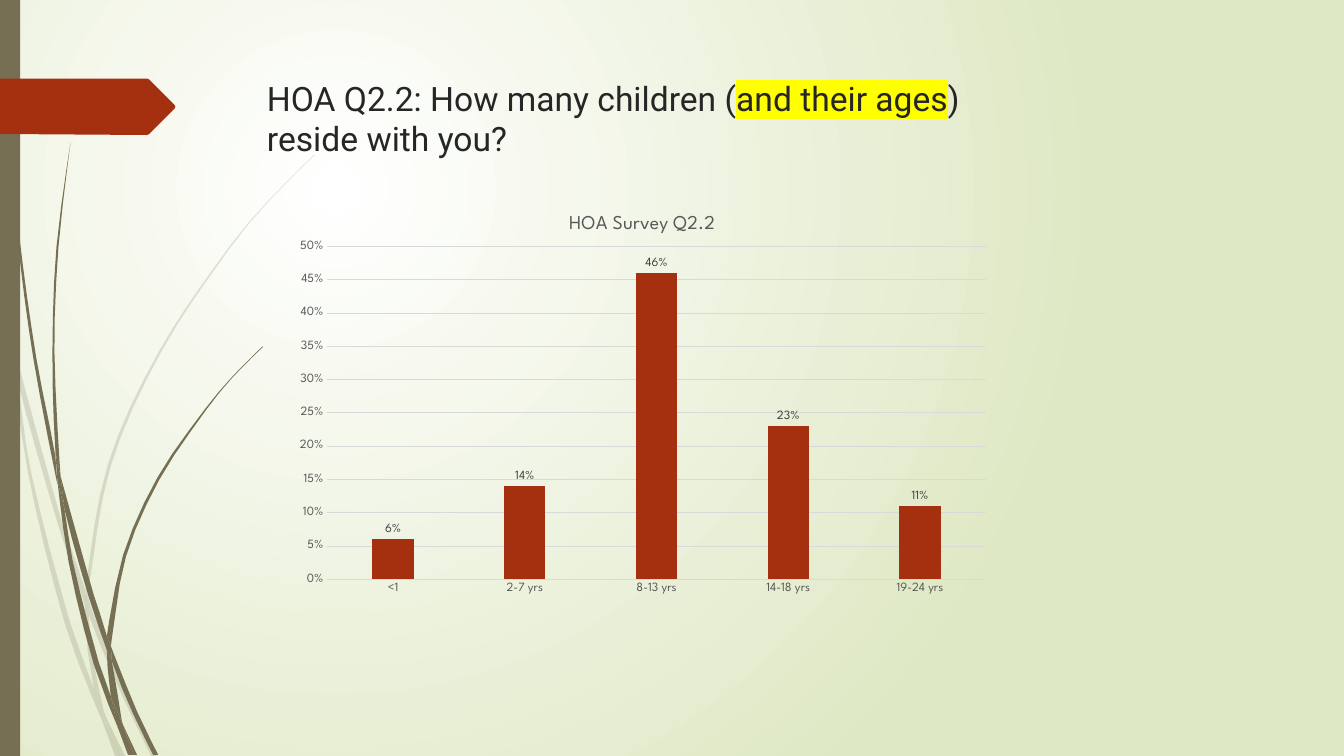
from dataclasses import dataclass
from math import atan2, dist, pi
from typing import Any

from lxml.etree import SubElement
from pptx import Presentation
from pptx.chart.data import CategoryChartData
from pptx.dml.color import RGBColor
from pptx.enum.chart import XL_CHART_TYPE as ChartType
from pptx.enum.chart import XL_LABEL_POSITION as LabelPosition
from pptx.enum.chart import XL_TICK_MARK as TickMark
from pptx.enum.shapes import MSO_SHAPE as Preset
from pptx.oxml.ns import qn
from pptx.util import Inches, Pt

Point = tuple[float, float]


@dataclass(frozen=True)
class Theme:
    brown: str = "766F54"
    rust: str = "A53010"
    white: str = "FFFFFF"
    sage: str = "DFE8C4"
    title: str = "262626"
    highlight: str = "FFFF00"
    axis: str = "595959"
    label: str = "404040"
    grid: str = "D9D9D9"
    title_font: str = "Roboto"
    chart_font: str = "League Spartan"
    title_size: int = 24
    chart_title_size: int = 14
    chart_size: int = 10
    label_size: int = 9
    line_width: float = 0.75


@dataclass(frozen=True)
class Grass:
    opacity: int
    blades: list[list[Point]]


THEME = Theme()

PALE_GRASS = Grass(20, [
    [(0.11, 3.5), (0.09, 3.22), (0, 2.82), (0, 2.99), (0.1, 3.44)],
    [(0.58, 5.22), (0.84, 5.99), (0.85, 5.86), (0.62, 5.2), (0.14, 3.45), (0.17, 3.76)],
    [(0.92, 6.07), (0.88, 5.96), (0.88, 6.1), (1.23, 6.94), (1.5, 7.5), (1.55, 7.5),
     (1.27, 6.92)],
    [(1.19, 7.5), (1.24, 7.5), (1.05, 7.11)],
    [(0.93, 6.83), (0.7, 6.19), (0.31, 4.69), (0.17, 3.76), (0.11, 3.5), (0.28, 4.7),
     (0.65, 6.21), (0.92, 6.93), (1.01, 7.14), (0.99, 7.07)],
    [(0.84, 5.99), (0.87, 6.46), (0.93, 6.83), (0.96, 6.92), (1.05, 7.11), (1.03, 7.06),
     (0.91, 6.46), (0.88, 6.1)],
    [(0.88, 5.84), (1.1, 4.62), (1.6, 3.49), (2.29, 2.45), (2.68, 1.98), (3.12, 1.54),
     (3.12, 1.53), (2.68, 1.97), (2.28, 2.44), (1.58, 3.48), (1.07, 4.61), (0.85, 5.84),
     (0.88, 5.96)],
    [(1.01, 7.14), (1.14, 7.5), (1.19, 7.5)],
    [(0.88, 6.1), (0.88, 5.96), (0.85, 5.86), (0.84, 5.99)],
    [(0.96, 6.92), (0.93, 6.83), (0.99, 7.07), (1.01, 7.14), (1.19, 7.5), (1.05, 7.11)],
])

DARK_GRASS = Grass(100, [
    [(0.07, 1.1), (0.17, 2.33), (0.33, 3.55), (0.57, 4.81), (0.55, 4.53), (0.36, 3.55),
     (0.19, 2.32), (0.08, 1.09), (0.04, 0), (0.03, 0)],
    [(0.88, 5.92), (1.06, 6.45), (1.06, 6.31), (0.93, 5.9), (0.6, 4.72), (0.64, 5.05)],
    [(1.13, 6.49), (1.1, 6.41), (1.11, 6.56), (1.32, 7.08), (1.52, 7.49), (1.57, 7.49),
     (1.36, 7.06)],
    [(1.1, 6.91), (0.98, 6.57), (0.72, 5.56), (0.64, 5.05), (0.57, 4.77), (0.68, 5.57),
     (0.93, 6.59), (1.17, 7.22), (1.16, 7.17)],
    [(0.6, 4.72), (0.54, 3.49), (0.58, 2.45), (0.7, 1.41), (0.56, 2.45), (0.52, 3.49),
     (0.55, 4.49)],
    [(1.33, 7.49), (1.36, 7.49), (1.22, 7.19)],
    [(0.57, 4.77), (0.64, 5.05), (0.6, 4.72), (0.55, 4.49)],
    [(1.11, 6.33), (1.25, 5.52), (1.58, 4.76), (2.05, 4.06), (2.31, 3.74), (2.61, 3.44),
     (2.6, 3.44), (2.31, 3.73), (2.04, 4.05), (1.56, 4.74), (1.22, 5.51), (1.06, 6.31),
     (1.1, 6.41)],
    [(1.17, 7.22), (1.27, 7.49), (1.31, 7.49)],
    [(1.06, 6.45), (1.1, 6.91), (1.22, 7.19), (1.21, 7.16), (1.11, 6.56)],
    [(1.06, 6.45), (1.11, 6.56), (1.1, 6.41), (1.06, 6.31)],
    [(1.1, 6.91), (1.17, 7.22), (1.3, 7.49), (1.33, 7.49), (1.22, 7.19)],
])

ARROW = [(0, 0.78), (1.46, 0.78), (1.48, 0.79), (1.73, 1.04), (1.74, 1.06),
         (1.73, 1.08), (1.48, 1.33), (1.46, 1.34), (0, 1.33)]

AGES = {"<1": 0.06, "2-7 yrs": 0.14, "8-13 yrs": 0.46, "14-18 yrs": 0.23, "19-24 yrs": 0.11}


def color(value: str) -> RGBColor:
    return RGBColor.from_string(value)


def tangent(before: Point, point: Point, after: Point) -> Point:
    heading = atan2(point[1] - before[1], point[0] - before[0])
    turn = atan2(after[1] - point[1], after[0] - point[0]) - heading
    if abs((turn + pi) % (2 * pi) - pi) > pi / 6:
        return 0, 0
    length = dist(before, after)
    return (after[0] - before[0]) / length, (after[1] - before[1]) / length


def smooth(anchors: list[Point], spacing: float = 0.4) -> list[Point]:
    ends = anchors[1:] + anchors[:1]
    leaving = [tangent(*trio) for trio in zip(anchors[-1:] + anchors[:-1], anchors, ends)]
    arriving = leaving[1:] + leaving[:1]
    outline = []
    for start, end, out, into in zip(anchors, ends, leaving, arriving):
        length = dist(start, end)
        steps = 1 + int(length / spacing)
        for step in range(steps):
            t = step / steps
            a, b, c, d = (1 - t) ** 3, 3 * t * (1 - t) ** 2, 3 * t * t * (1 - t), t ** 3
            x, y = ((a + b) * start[k] + (c + d) * end[k]
                    + (b * out[k] - c * into[k]) * length / 3 for k in (0, 1))
            outline.append((x, y))
    return outline


def paint(shape: Any, fill: str, opacity: int = 100) -> None:
    shape.shadow.inherit = False
    shape.fill.solid()
    shape.fill.fore_color.rgb = color(fill)
    shape.line.fill.background()
    if opacity < 100:
        tint = shape.element.spPr.find(f".//{qn('a:srgbClr')}")
        SubElement(tint, qn("a:alpha"), val=str(opacity * 1000))


def draw_outline(shapes: Any, outline: list[Point], fill: str, opacity: int = 100) -> None:
    points = [(Inches(x), Inches(y)) for x, y in outline]
    builder = shapes.build_freeform(*points[0])
    builder.add_line_segments(points[1:], close=True)
    paint(builder.convert_to_shape(), fill, opacity)


def draw_background(slide: Any) -> None:
    fill = slide.background.fill
    fill.gradient()
    for stop, value in zip(fill.gradient_stops, (THEME.white, THEME.sage)):
        stop.color.rgb = color(value)
    gradient = slide.element.find(f".//{qn('a:gradFill')}")
    gradient.remove(gradient.find(qn("a:lin")))
    circle = SubElement(gradient, qn("a:path"), path="circle")
    SubElement(circle, qn("a:fillToRect"), l="50000", t="50000", r="100000", b="100000")


def style_font(font: Any, size: int, value: str, name: str = THEME.chart_font) -> None:
    font.size, font.name, font.bold = Pt(size), name, False
    font.color.rgb = color(value)


def style_line(line: Any) -> None:
    line.color.rgb = color(THEME.grid)
    line.width = Pt(THEME.line_width)


def draw_title(slide: Any) -> None:
    box = slide.shapes.add_textbox(Inches(2.55), Inches(0.72), Inches(8), Inches(1.1))
    frame = box.text_frame
    frame.word_wrap = True
    frame.margin_right = Inches(0.3)
    paragraph = frame.paragraphs[0]
    style_font(paragraph.font, THEME.title_size, THEME.title, THEME.title_font)
    for text in ("HOA Q2.2: How many children (", "and their ages", ") reside with you?"):
        paragraph.add_run().text = text
    properties = paragraph.runs[1].font._element
    highlight = SubElement(properties, qn("a:highlight"))
    SubElement(highlight, qn("a:srgbClr"), val=THEME.highlight)


def place_plot(chart: Any, **position: float) -> None:
    area = chart.element.find(f".//{qn('c:plotArea')}") if hasattr(chart, "element") \
        else chart._chartSpace.find(f".//{qn('c:plotArea')}")
    layout = area.find(qn("c:layout"))
    if layout is None:
        layout = SubElement(area, qn("c:layout"))
        area.insert(0, layout)
    manual = SubElement(layout, qn("c:manualLayout"))
    settings = {"layoutTarget": "inner", "xMode": "edge", "yMode": "edge"} | position
    for name, value in settings.items():
        SubElement(manual, qn(f"c:{name}"), val=str(value))


def draw_chart(slide: Any) -> None:
    data = CategoryChartData(number_format="0%")
    data.categories = list(AGES)
    data.add_series("Series 1", list(AGES.values()))
    chart = slide.shapes.add_chart(ChartType.COLUMN_CLUSTERED, Inches(2.82), Inches(1.95),
                                   Inches(7.1), Inches(4.13), data).chart
    style_font(chart.font, THEME.chart_size, THEME.axis)
    chart.has_legend = False
    heading = chart.chart_title.text_frame
    heading.text = "HOA Survey Q2.2"
    style_font(heading.paragraphs[0].font, THEME.chart_title_size, THEME.axis)
    place_plot(chart, x=0.06, y=0.12, w=0.92, h=0.8)

    categories, values = chart.category_axis, chart.value_axis
    for axis in (categories, values):
        axis.major_tick_mark = axis.minor_tick_mark = TickMark.NONE
        style_font(axis.tick_labels.font, THEME.label_size, THEME.axis)
    style_line(categories.format.line)
    values.format.line.fill.background()
    style_line(values.major_gridlines.format.line)
    values.minimum_scale, values.maximum_scale, values.major_unit = 0, 0.5, 0.05

    plot = chart.plots[0]
    plot.gap_width, plot.overlap, plot.vary_by_categories = 219, -27, False
    series = plot.series[0]
    series.invert_if_negative = False
    series.format.fill.solid()
    series.format.fill.fore_color.rgb = color(THEME.rust)
    labels = series.data_labels
    labels.show_value = True
    labels.position = LabelPosition.OUTSIDE_END
    style_font(labels.font, THEME.label_size, THEME.label)
    for numbers in (values.tick_labels, labels):
        numbers.number_format, numbers.number_format_is_linked = "0%", False


def main() -> None:
    presentation = Presentation()
    presentation.slide_width, presentation.slide_height = Inches(13.33), Inches(7.5)
    slide = presentation.slides.add_slide(presentation.slide_layouts[6])
    draw_background(slide)
    for grass in (PALE_GRASS, DARK_GRASS):
        group = slide.shapes.add_group_shape()
        for blade in grass.blades:
            draw_outline(group.shapes, smooth(blade), THEME.brown, grass.opacity)
    edge = slide.shapes.add_shape(Preset.RECTANGLE, 0, 0, Inches(0.2), Inches(7.5))
    paint(edge, THEME.brown)
    draw_outline(slide.shapes, ARROW, THEME.rust)
    draw_title(slide)
    draw_chart(slide)
    presentation.save("out.pptx")


if __name__ == "__main__":
    main()
